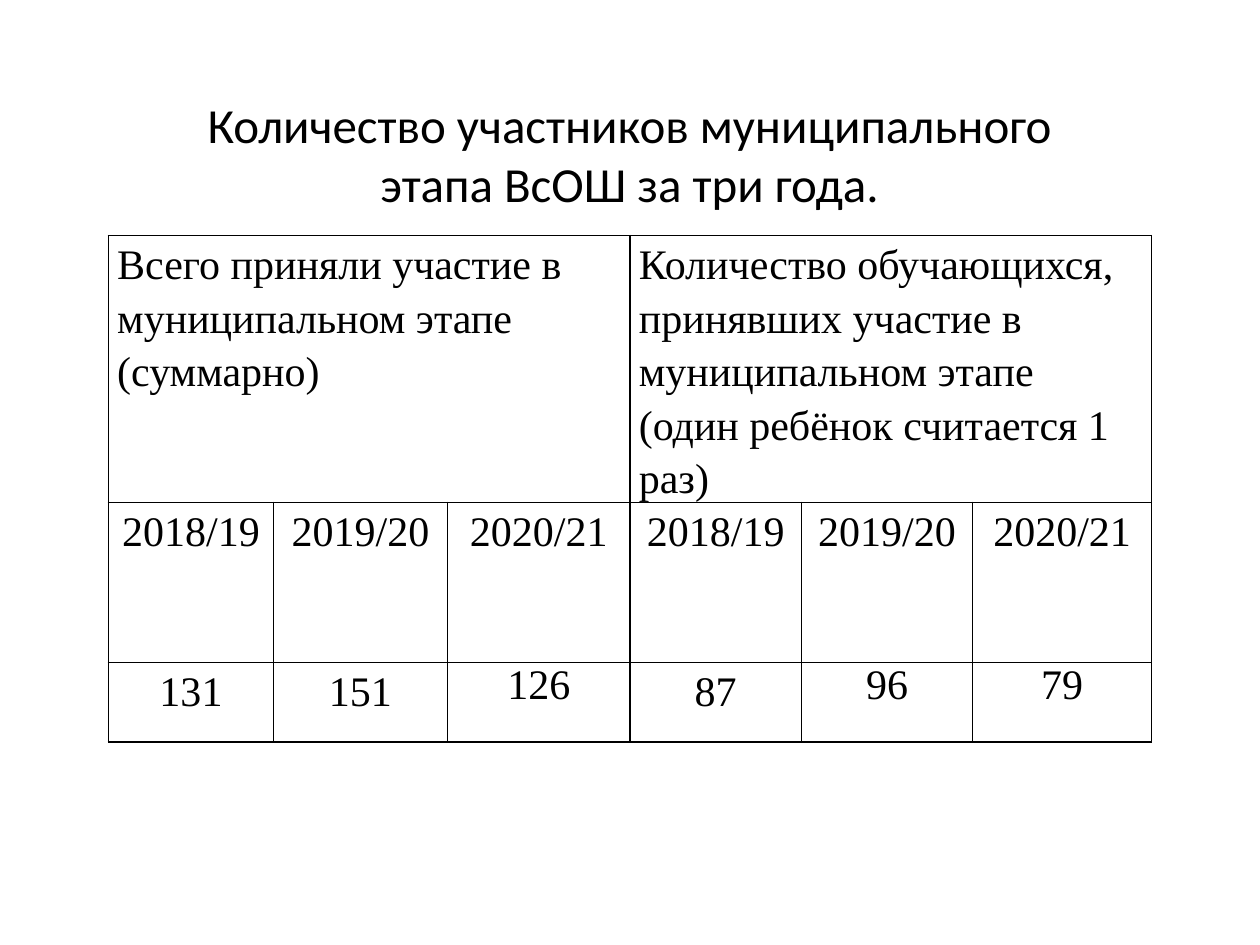
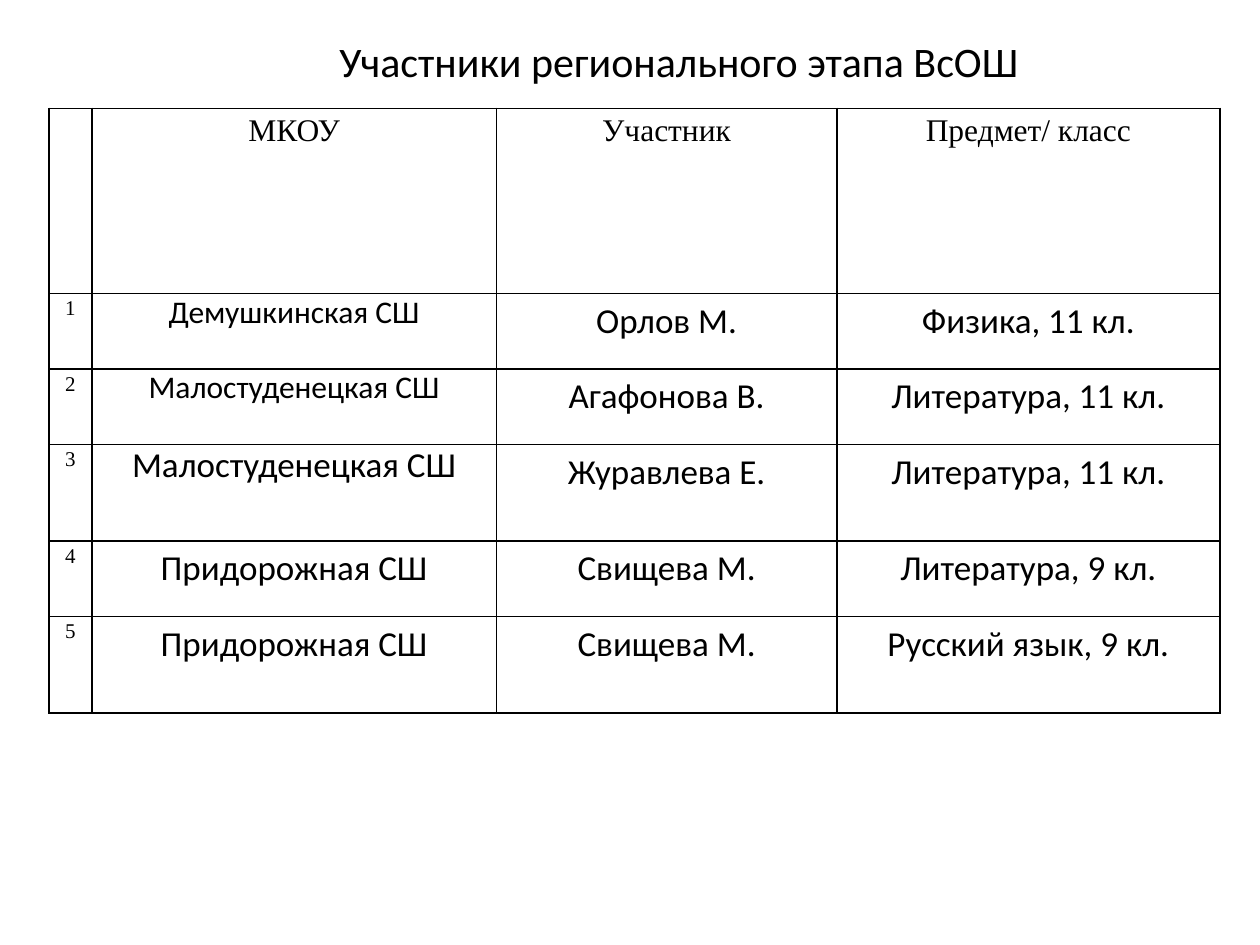
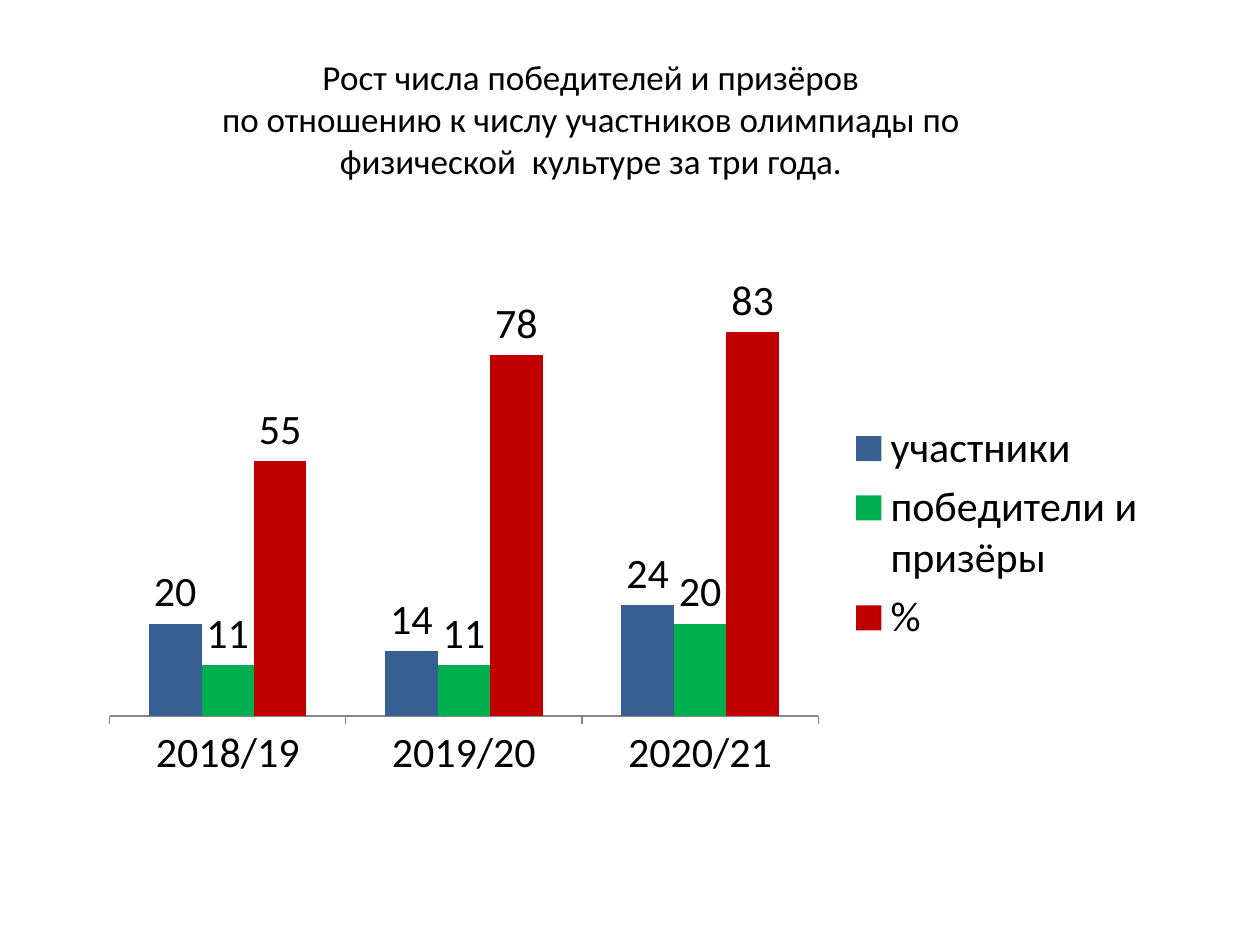
"""Builds three slides on the results of a school olympiad."""
from lxml.etree import SubElement as Sub
from pptx import Presentation
from pptx.chart.data import CategoryChartData as ChartData
from pptx.dml.color import RGBColor as RGB
from pptx.enum.chart import XL_CHART_TYPE as ChartType
from pptx.enum.chart import XL_LABEL_POSITION as LabelPos
from pptx.enum.chart import XL_LEGEND_POSITION as LegendPos
from pptx.enum.chart import XL_TICK_MARK as Tick
from pptx.enum.text import MSO_ANCHOR as Anchor
from pptx.enum.text import MSO_AUTO_SIZE as AutoSize
from pptx.enum.text import PP_ALIGN as Align
from pptx.oxml.ns import qn
from pptx.util import Pt

COLORS = {
    "text": "000000",
    "border": "000000",
    "axis": "868686",
    "participants": "376092",
    "winners": "00B050",
    "percent": "C00000",
}
SANS, SERIF = "Calibri", "Times New Roman"
YEARS = ["2018/19", "2019/20", "2020/21"]

HEADING = {"size": 24, "font": SERIF, "spacing": 1.15, "align": Align.LEFT}
FIGURE = {**HEADING, "align": Align.CENTER}
TIGHT_FIGURE = {**FIGURE, "spacing": 1.0}
COLUMN_HEAD = {**FIGURE, "size": 18}
NUMBER = {**FIGURE, "size": 12}
ENTRY = {**FIGURE, "size": 20, "font": SANS}
TIGHT_ENTRY = {**ENTRY, "spacing": 1.0}
SMALL_ENTRY = {**TIGHT_ENTRY, "size": 18}


def color(name):
    return RGB.from_string(COLORS[name])


def assign(target, values):
    for key, value in values.items():
        setattr(target, key, value)


def style_font(font, size, name=SANS):
    assign(font, {"size": Pt(size), "name": name})
    font.color.rgb = color("text")


def fill_text(frame, text, style):
    frame.text = text
    for paragraph in frame.paragraphs:
        assign(paragraph, {"alignment": style["align"], "line_spacing": style["spacing"]})
        for run in paragraph.runs:
            style_font(run.font, style["size"], style["font"])


def add_titled_slide(deck, text, size, box):
    slide = deck.slides.add_slide(deck.slide_layouts[5])
    title = slide.shapes.title
    assign(title, dict(zip(("left", "top", "width", "height"), map(Pt, box))))
    assign(title.text_frame, {
        "word_wrap": True,
        "auto_size": AutoSize.NONE,
        "vertical_anchor": Anchor.TOP,
    })
    fill_text(title.text_frame, text, {**TIGHT_ENTRY, "size": size})
    return slide


def draw_borders(cell):
    properties = cell._tc.get_or_add_tcPr()
    for side in ("lnL", "lnR", "lnT", "lnB"):
        line = Sub(properties, qn(f"a:{side}"), w=str(Pt(1)))
        Sub(Sub(line, qn("a:solidFill")), qn("a:srgbClr"), val=COLORS["border"])


def add_grid(slide, left, top, widths, heights, rows):
    """Adds a bordered table from rows of (text, style) cells, None leaving a cell empty."""
    grid = slide.shapes.add_table(
        len(heights), len(widths), Pt(left), Pt(top), Pt(sum(widths)), Pt(sum(heights))
    ).table
    assign(grid, {"first_row": False, "horz_banding": False})
    for column, width in zip(grid.columns, widths):
        column.width = Pt(width)
    for row, height, contents in zip(grid.rows, heights, rows):
        row.height = Pt(height)
        for cell, content in zip(row.cells, contents):
            draw_borders(cell)
            cell.fill.background()
            assign(cell, {
                "margin_left": Pt(5),
                "margin_right": Pt(5),
                "margin_top": 0,
                "margin_bottom": 0,
            })
            if content:
                fill_text(cell.text_frame, *content)
    return grid


def place_plot(chart, **fractions):
    area = chart._chartSpace.chart.plotArea
    for old in area.findall(qn("c:layout")):
        area.remove(old)
    layout = Sub(area, qn("c:layout"))
    area.insert(0, layout)
    manual = Sub(layout, qn("c:manualLayout"))
    settings = {"layoutTarget": "inner", "xMode": "edge", "yMode": "edge", **fractions}
    for tag, value in settings.items():
        Sub(manual, qn(f"c:{tag}"), val=str(value))


def add_columns(slide, box, categories, series):
    data = ChartData()
    data.categories = categories
    for name, values, _ in series:
        data.add_series(name, values)
    chart = slide.shapes.add_chart(ChartType.COLUMN_CLUSTERED, *map(Pt, box), data).chart
    style_font(chart.font, 24)
    assign(chart, {"has_title": False, "has_legend": True})
    assign(chart.legend, {"position": LegendPos.RIGHT, "include_in_layout": False})
    style_font(chart.legend.font, 24)

    assign(chart.value_axis, {
        "visible": False,
        "has_major_gridlines": False,
        "minimum_scale": 0,
        "maximum_scale": 90,
    })
    years = chart.category_axis
    years.major_tick_mark = Tick.OUTSIDE
    years.format.line.color.rgb = color("axis")
    style_font(years.tick_labels.font, 24)

    plot = chart.plots[0]
    assign(plot, {"gap_width": 150, "vary_by_categories": False, "has_data_labels": True})
    assign(plot.data_labels, {"show_value": True, "position": LabelPos.OUTSIDE_END})
    style_font(plot.data_labels.font, 24)
    for bars, (_, _, shade) in zip(plot.series, series):
        bars.format.fill.solid()
        bars.format.fill.fore_color.rgb = color(shade)
    place_plot(chart, x=0.02, y=0.04, w=0.66, h=0.82)


def add_municipal_stage(deck):
    slide = add_titled_slide(
        deck, "Количество участников муниципального этапа ВсОШ за три года.",
        28, (84, 50.5, 551.5, 75),
    )
    total = "Всего приняли участие в муниципальном этапе (суммарно)"
    pupils = ("Количество обучающихся, принявших участие в муниципальном этапе "
              "(один ребёнок считается 1 раз)")
    rows = [
        [(total, HEADING), None, None, (pupils, HEADING), None, None],
        [(year, FIGURE) for year in YEARS * 2],
        [("131", FIGURE), ("151", FIGURE), ("126", TIGHT_FIGURE),
         ("87", FIGURE), ("96", TIGHT_FIGURE), ("79", TIGHT_FIGURE)],
    ]
    grid = add_grid(slide, 62, 134.6, [94.3, 99.4, 104.4, 97.9, 97.9, 102.2],
                    [152.2, 91.5, 45.4], rows)
    for first in (0, 3):
        grid.cell(0, first).merge(grid.cell(0, first + 2))


def add_regional_stage(deck):
    slide = add_titled_slide(
        deck, "Участники регионального этапа ВсОШ", 24, (118, 16.5, 540, 36)
    )
    entrants = [
        ("Демушкинская СШ", SMALL_ENTRY, "Орлов М.", "Физика, 11 кл."),
        ("Малостуденецкая СШ", SMALL_ENTRY, "Агафонова В.", "Литература, 11 кл."),
        ("Малостуденецкая СШ", TIGHT_ENTRY, "Журавлева Е.", "Литература, 11 кл."),
        ("Придорожная СШ", ENTRY, "Свищева М.", "Литература, 9 кл."),
        ("Придорожная СШ", ENTRY, "Свищева М.", "Русский язык, 9 кл."),
    ]
    heads = ["МКОУ", "Участник", "Предмет/ класс"]
    rows = [[None] + [(head, COLUMN_HEAD) for head in heads]]
    for number, (school, school_style, pupil, subject) in enumerate(entrants, 1):
        rows.append([(str(number), NUMBER), (school, school_style),
                     (pupil, ENTRY), (subject, ENTRY)])
    add_grid(slide, 28, 62, [24.5, 231.2, 194.5, 219],
             [105.6, 43.2, 43.2, 55.2, 43.2, 55.2], rows)


def add_winners_growth(deck):
    slide = add_titled_slide(
        deck,
        "Рост числа победителей и призёров\n"
        "по отношению к числу участников олимпиады по физической  культуре за три года.",
        20, (90, 28, 495.5, 80),
    )
    add_columns(slide, (50.4, 157.7, 613.5, 292.3), YEARS, [
        ("участники", (20, 14, 24), "participants"),
        ("победители и призёры", (11, 11, 20), "winners"),
        ("%", (55, 78, 83), "percent"),
    ])


def main():
    deck = Presentation()
    assign(deck, {"slide_width": Pt(720), "slide_height": Pt(540)})
    add_municipal_stage(deck)
    add_regional_stage(deck)
    add_winners_growth(deck)
    deck.save("out.pptx")


if __name__ == "__main__":
    main()
